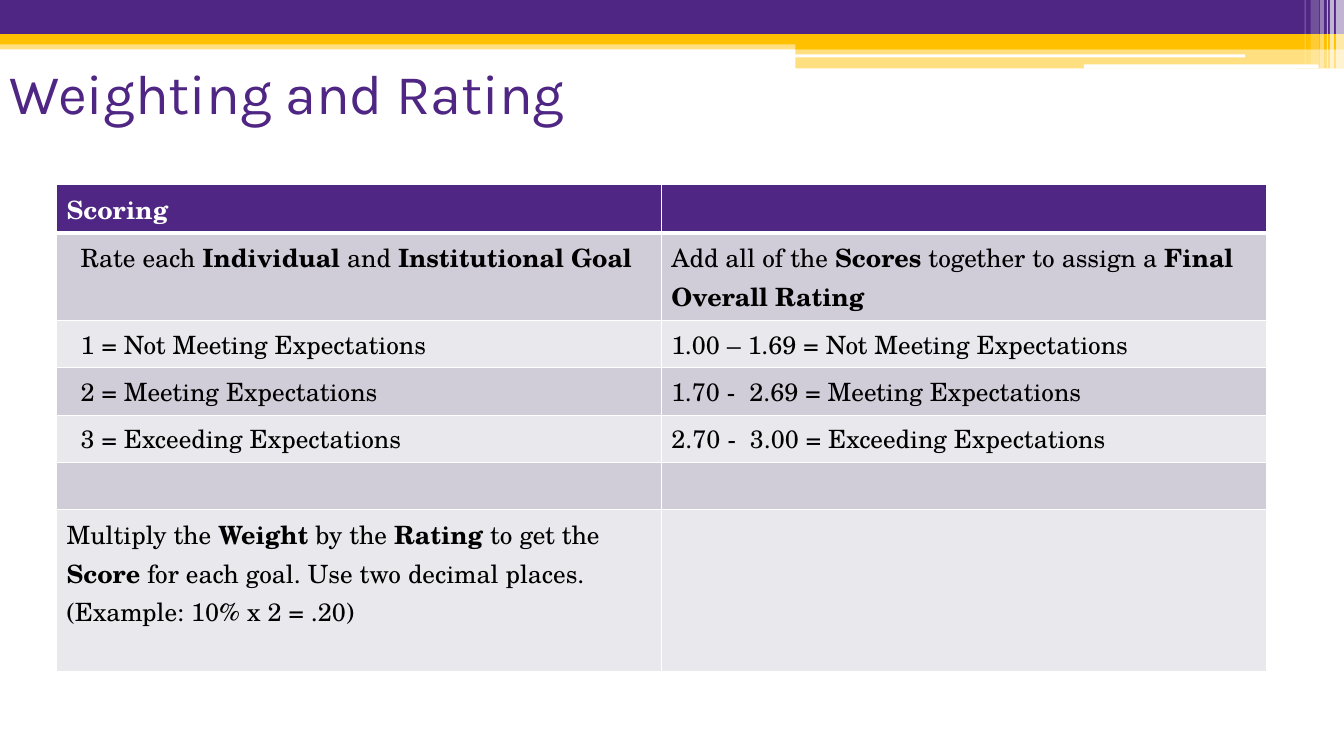
from dataclasses import dataclass

from lxml import etree
from pptx import Presentation
from pptx import util as u
from pptx.dml import color
from pptx.enum import shapes, text
from pptx.oxml import ns


@dataclass(frozen=True)
class Theme:
    purple: str = "4F2683"
    gold: str = "FFC000"
    white: str = "FFFFFF"
    black: str = "000000"
    dark_band: str = "D0CDD9"
    light_band: str = "E9E8ED"
    title_font: str = "Karla"
    body_font: str = "TeX Gyre Schola"
    title_size: int = 40
    body_size: int = 18


THEME = Theme()

# Cell text: **bold** marks emphasis, a newline marks a line break
SCORING_ROWS = [
    ("**Scoring**", ""),
    ("Rate each **Individual** and **Institutional Goal**",
     "Add all of the **Scores** together to assign a **Final Overall Rating**"),
    ("1 = Not Meeting Expectations", "1.00 – 1.69 = Not Meeting Expectations"),
    ("2 = Meeting Expectations", "1.70 -  2.69 = Meeting Expectations"),
    ("3 = Exceeding Expectations", "2.70 -  3.00 = Exceeding Expectations"),
    ("", ""),
    ("Multiply the **Weight** by the **Rating** to get the **Score** for each goal. "
     "Use two decimal places.\n(Example: 10% x 2 = .20)", ""),
]
ROW_HEIGHTS = [0.48, 0.87] + [0.47] * 4 + [1.6]
INDENTED_ROWS = range(1, 5)


def write_text(paragraph, content, *, font, size, fill):
    """Write text into a paragraph, with **bold** parts and line breaks."""
    for part_index, part in enumerate(content.split("**")):
        for line_index, line in enumerate(part.split("\n")):
            if line_index:
                paragraph.add_line_break()
            if not line:
                continue
            run = paragraph.add_run()
            run.text = line
            run.font.name = font
            run.font.size = u.Pt(size)
            run.font.bold = part_index % 2 == 1
            run.font.color.rgb = color.RGBColor.from_string(fill)


def add_bar(slide, box, fill, opacity=100, rounded=False):
    kind = shapes.MSO_SHAPE.ROUNDED_RECTANGLE if rounded else shapes.MSO_SHAPE.RECTANGLE
    shape = slide.shapes.add_shape(kind, *map(u.Inches, box))
    shape.shadow.inherit = False
    shape.line.fill.background()
    shape.fill.solid()
    shape.fill.fore_color.rgb = color.RGBColor.from_string(fill)
    if opacity < 100:
        rgb = shape.fill._xPr.find(".//" + ns.qn("a:srgbClr"))
        etree.SubElement(rgb, ns.qn("a:alpha"), val=str(opacity * 1000))


def add_banner(slide, left, top, width):
    """Draw the coloured bands and the pale stripes at their right end."""
    right = left + width
    step_width = 5.44
    step = right - step_width

    # Full-width bands, then the stepped bands on the right
    add_bar(slide, (left, top + 0.4, width, 0.09), THEME.gold, 50)
    add_bar(slide, (left, top, width, 0.34), THEME.purple)
    add_bar(slide, (left, top + 0.34, width, 0.1), THEME.gold)
    add_bar(slide, (step, top + 0.39, step_width, 0.1), THEME.gold)
    add_bar(slide, (step, top + 0.48, step_width, 0.2), THEME.gold, 50)

    # White slits
    add_bar(slide, (step - 0.01, top + 0.54, 4.47, 0.03), THEME.white, rounded=True)
    add_bar(slide, (step + 2.86, top + 0.64, 2.33, 0.04), THEME.white, rounded=True)

    # Vertical stripes: distance from the right edge, width, height, opacity
    for offset, stripe_width, height, opacity in (
        (0.08, 0.08, 0.68, 65),
        (0.14, 0.04, 0.68, 65),
        (0.17, 0.01, 0.68, 60),
        (0.24, 0.04, 0.68, 40),
        (0.33, 0.08, 0.64, 20),
        (0.39, 0.01, 0.64, 30),
    ):
        add_bar(slide, (right - offset, top, stripe_width, height), THEME.white, opacity)


def add_title(slide, box, content):
    frame = slide.shapes.add_textbox(*map(u.Inches, box)).text_frame
    frame.word_wrap = True
    frame.vertical_anchor = text.MSO_ANCHOR.MIDDLE
    write_text(frame.paragraphs[0], content, font=THEME.title_font,
               size=THEME.title_size, fill=THEME.purple)


def set_borders(cell, **widths):
    """Draw white borders; widths are points for L, R, T and B."""
    properties = cell._tc.get_or_add_tcPr()
    for side, width in widths.items():
        line = etree.SubElement(properties, ns.qn(f"a:ln{side}"), w=str(u.Pt(width)))
        fill = etree.SubElement(line, ns.qn("a:solidFill"))
        etree.SubElement(fill, ns.qn("a:srgbClr"), val=THEME.white)


def add_scoring_table(slide, left, top, width):
    box = map(u.Inches, (left, top, width, sum(ROW_HEIGHTS)))
    table = slide.shapes.add_table(len(SCORING_ROWS), 2, *box).table
    for column in table.columns:
        column.width = u.Inches(width / 2)

    for row_index, contents in enumerate(SCORING_ROWS):
        table.rows[row_index].height = u.Inches(ROW_HEIGHTS[row_index])
        is_header = row_index == 0
        band = THEME.dark_band if row_index % 2 else THEME.light_band
        for column_index, content in enumerate(contents):
            cell = table.cell(row_index, column_index)
            set_borders(cell, L=1, R=1, T=3 if row_index == 1 else 1,
                        B=3 if is_header else 1)
            cell.fill.solid()
            cell.fill.fore_color.rgb = color.RGBColor.from_string(
                THEME.purple if is_header else band)
            if column_index == 0 and row_index in INDENTED_ROWS:
                cell.margin_left = u.Inches(0.24)
            write_text(cell.text_frame.paragraphs[0], content, font=THEME.body_font,
                       size=THEME.body_size,
                       fill=THEME.white if is_header else THEME.black)


def main():
    presentation = Presentation()
    presentation.slide_width = u.Inches(13.33)
    presentation.slide_height = u.Inches(7.5)
    slide = presentation.slides.add_slide(presentation.slide_layouts[6])
    add_banner(slide, 0, 0, 13.33)
    add_title(slide, (0, 0.33, 12, 1.17), "Weighting and Rating")
    add_scoring_table(slide, 0.56, 1.83, 12)
    presentation.save("out.pptx")


if __name__ == "__main__":
    main()
